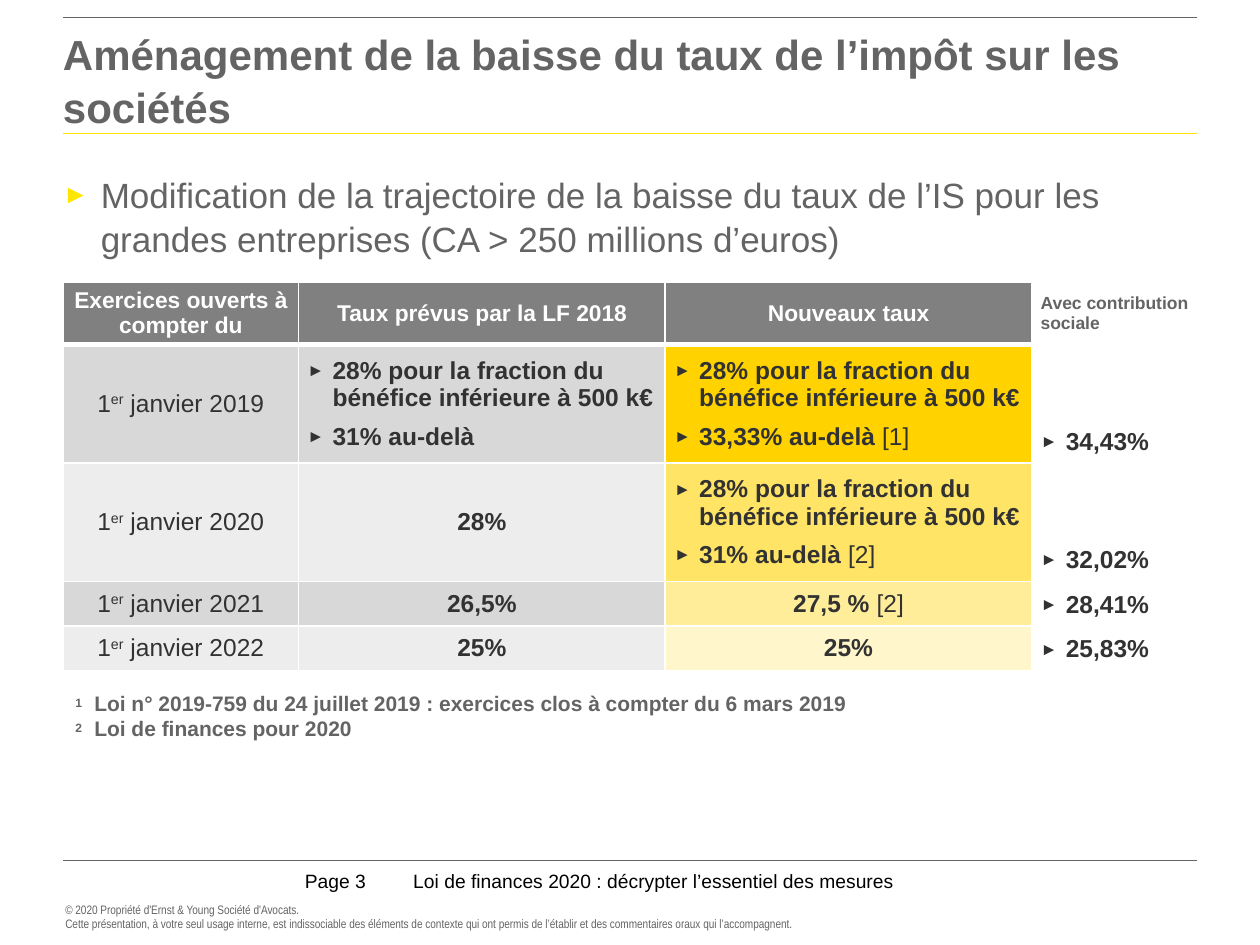
from lxml.etree import SubElement
from pptx import Presentation
from pptx.dml.color import RGBColor
from pptx.enum.shapes import MSO_CONNECTOR
from pptx.enum.text import MSO_ANCHOR, PP_ALIGN
from pptx.oxml.ns import qn
from pptx.util import Emu, Inches, Pt

SLIDE_WIDTH, SLIDE_HEIGHT = 10, 7.5
MARGIN = 0.5
CONTENT_WIDTH = SLIDE_WIDTH - 2 * MARGIN

WHITE = RGBColor(0xFF, 0xFF, 0xFF)
BLACK = RGBColor(0x00, 0x00, 0x00)
GREY = RGBColor(0x64, 0x64, 0x64)
DARK = RGBColor(0x32, 0x32, 0x32)
HEADER_FILL = RGBColor(0x80, 0x80, 0x80)
BAND_FILLS = (RGBColor(0xD8, 0xD8, 0xD8), RGBColor(0xED, 0xED, 0xED))
YELLOW = RGBColor(0xFF, 0xE6, 0x00)
GOLD = RGBColor(0xFF, 0xD2, 0x00)

COLUMN_WIDTHS = (1.87, 2.91, 2.91, 1.42)
ROW_HEIGHTS = (0.49, 0.94, 0.94, 0.34, 0.34)
HEADERS = ("Exercices ouverts à compter du", "Taux prévus par la LF 2018",
           "Nouveaux taux", "Avec contribution sociale")
REDUCED_RATE = "28% pour la fraction du bénéfice inférieure à 500 k€"
# Year, planned rates, new rates, note on the last new rate, rate with
# contribution, opacity of the new rate's fill in percent
RATES = (
    ("2019", (REDUCED_RATE, "31% au-delà"), (REDUCED_RATE, "33,33% au-delà "), "[1]", "34,43%", 100),
    ("2020", ("28%",), (REDUCED_RATE, "31% au-delà "), "[2]", "32,02%", 60),
    ("2021", ("26,5%",), ("27,5 % ",), "[2]", "28,41%", 40),
    ("2022", ("25%",), ("25%",), "", "25,83%", 20),
)
FOOTNOTES = (
    ("1 ", "Loi n° 2019-759 du 24 juillet 2019 : exercices clos à compter du 6 mars 2019"),
    ("2 ", "Loi de finances pour 2020"),
)


def style_font(font, size, color, bold=False, name="Arial"):
    font.name, font.size, font.bold = name, Pt(size), bold
    font.color.rgb = color


def add_run(paragraph, text, size, color, bold=False, baseline=0):
    """Append a run; baseline is its raise in percent."""
    run = paragraph.add_run()
    run.text = text
    style_font(run.font, size, color, bold)
    if baseline:
        run._r.get_or_add_rPr().set("baseline", str(baseline * 1000))


def set_hanging_indent(paragraph, indent):
    properties = paragraph._p.get_or_add_pPr()
    properties.set("marL", str(Inches(indent)))
    properties.set("indent", str(-Inches(indent)))
    return properties


def add_bullet(paragraph, indent, percent, color=None):
    properties = set_hanging_indent(paragraph, indent)
    if color is not None:
        bullet_color = SubElement(properties, qn("a:buClr"))
        SubElement(bullet_color, qn("a:srgbClr")).set("val", str(color))
    SubElement(properties, qn("a:buSzPct")).set("val", str(percent * 1000))
    SubElement(properties, qn("a:buFont")).set("typeface", "Arial")
    SubElement(properties, qn("a:buChar")).set("char", "►")


def add_text_box(slide, box, insets=(0, 0, 0, 0)):
    """Add a wrapping text box; insets run left, top, right, bottom."""
    text_frame = slide.shapes.add_textbox(*map(Inches, box)).text_frame
    text_frame.word_wrap = True
    (text_frame.margin_left, text_frame.margin_top,
     text_frame.margin_right, text_frame.margin_bottom) = map(Inches, insets)
    return text_frame


def add_rule(slide, top, color, width):
    line = slide.shapes.add_connector(
        MSO_CONNECTOR.STRAIGHT, Inches(MARGIN), Inches(top),
        Inches(MARGIN + CONTENT_WIDTH), Inches(top))
    line.line.color.rgb = color
    line.line.width = Pt(width)
    SubElement(line._element.spPr, qn("a:effectLst"))


def add_title(slide, box):
    left, top, width, height = box
    add_rule(slide, top, GREY, 0.5)
    add_rule(slide, top + height - 0.02, YELLOW, 1)
    text_frame = add_text_box(slide, box, (0, 0.04, 0, 0))
    text_frame.vertical_anchor = MSO_ANCHOR.MIDDLE
    text_frame.text = "Aménagement de la baisse du taux de l’impôt sur les sociétés"
    paragraph = text_frame.paragraphs[0]
    paragraph.line_spacing = 1.05
    style_font(paragraph.runs[0].font, 24, GREY, bold=True)


def add_body(slide, box):
    text_frame = add_text_box(slide, box)
    text_frame.text = ("Modification de la trajectoire de la baisse du taux de l’IS pour les "
                       "grandes entreprises (CA > 250 millions d’euros)")
    paragraph = text_frame.paragraphs[0]
    add_bullet(paragraph, 0.3, 75, YELLOW)
    paragraph.line_spacing = 1.05
    style_font(paragraph.runs[0].font, 20, GREY)


def set_borders(cell, top=1, bottom=1):
    properties = cell._tc.get_or_add_tcPr()
    for side, width in (("L", 1), ("R", 1), ("T", top), ("B", bottom)):
        border = SubElement(properties, qn(f"a:ln{side}"))
        border.set("w", str(Pt(width)))
        fill = SubElement(border, qn("a:solidFill"))
        SubElement(fill, qn("a:srgbClr")).set("val", str(WHITE))


def format_cell(cell, fill, opacity=100, vertical_inset=0.06, **borders):
    set_borders(cell, **borders)
    cell.vertical_anchor = MSO_ANCHOR.MIDDLE
    cell.margin_left = cell.margin_right = Inches(0.07)
    cell.margin_top = cell.margin_bottom = Inches(vertical_inset)
    if fill is None:
        cell.fill.background()
        return
    cell.fill.solid()
    cell.fill.fore_color.rgb = fill
    if opacity < 100:
        color = cell._tc.tcPr.find(qn("a:solidFill")).find(qn("a:srgbClr"))
        SubElement(color, qn("a:alpha")).set("val", str(opacity * 1000))


def write_rates(cell, rates, note="", bulleted=False):
    """Write one paragraph per rate, with the note after the last."""
    for index, rate in enumerate(rates):
        paragraph = cell.text_frame.paragraphs[0] if index == 0 else cell.text_frame.add_paragraph()
        if bulleted:
            add_bullet(paragraph, 0.2, 70)
        else:
            paragraph.alignment = PP_ALIGN.CENTER
        if index:
            paragraph.space_before = Pt(6)
        add_run(paragraph, rate, 14, DARK, bold=True)
    if note:
        add_run(paragraph, note, 14, DARK)


def write_start_date(cell, year):
    paragraph = cell.text_frame.paragraphs[0]
    paragraph.alignment = PP_ALIGN.CENTER
    add_run(paragraph, "1", 14, DARK)
    add_run(paragraph, "er", 14, DARK, baseline=30)
    add_run(paragraph, f" janvier {year}", 14, DARK)


def add_rate_table(slide, left, top):
    table = slide.shapes.add_table(
        len(ROW_HEIGHTS), len(COLUMN_WIDTHS), Inches(left), Inches(top),
        Inches(sum(COLUMN_WIDTHS)), Inches(sum(ROW_HEIGHTS))).table
    for column, width in zip(table.columns, COLUMN_WIDTHS):
        column.width = Inches(width)
    for row, height in zip(table.rows, ROW_HEIGHTS):
        row.height = Inches(height)

    last = len(HEADERS) - 1
    for index, header in enumerate(HEADERS):
        cell = table.cell(0, index)
        format_cell(cell, None if index == last else HEADER_FILL, vertical_inset=0.03, bottom=3)
        cell.text_frame.text = header
        paragraph = cell.text_frame.paragraphs[0]
        paragraph.alignment = PP_ALIGN.LEFT if index == last else PP_ALIGN.CENTER
        size, color = (10, GREY) if index == last else (13, WHITE)
        style_font(paragraph.runs[0].font, size, color, bold=True)

    for row, (year, planned, new, note, total, opacity) in enumerate(RATES, start=1):
        date_cell, planned_cell, new_cell, total_cell = (
            table.cell(row, column) for column in range(len(HEADERS)))
        top_border = 3 if row == 1 else 1
        band = BAND_FILLS[(row - 1) % 2]
        for cell, fill in ((date_cell, band), (planned_cell, band), (total_cell, None)):
            format_cell(cell, fill, top=top_border)
        format_cell(new_cell, GOLD, opacity, top=top_border)
        write_start_date(date_cell, year)
        write_rates(planned_cell, planned, bulleted=len(planned) > 1)
        write_rates(new_cell, new, note, bulleted=len(new) > 1)
        write_rates(total_cell, (total,), bulleted=True)
        total_cell.vertical_anchor = MSO_ANCHOR.BOTTOM


def add_footnotes(slide, box):
    text_frame = add_text_box(slide, box, (0.1, 0.05, 0.1, 0.05))
    for index, (mark, note) in enumerate(FOOTNOTES):
        paragraph = text_frame.paragraphs[0] if index == 0 else text_frame.add_paragraph()
        set_hanging_indent(paragraph, 0.15)
        add_run(paragraph, mark, 12, GREY, bold=True, baseline=20)
        add_run(paragraph, "\t" + note, 12, GREY, bold=True)


def add_footer(slide, top):
    add_rule(slide, top, GREY, 0.25)
    for left, width, text in (
            (2.42, 0.73, "Page 3"),
            (3.28, 4.64, "Loi de finances 2020 : décrypter l’essentiel des mesures")):
        text_frame = add_text_box(slide, (left, top + 0.07, width, 0.22))
        text_frame.text = text
        style_font(text_frame.paragraphs[0].runs[0].font, 11, BLACK)
    text_frame = add_text_box(slide, (0.42, top + 0.28, 7.5, 0.34), (0.1, 0.05, 0.1, 0.05))
    text_frame.text = ("© 2020 Propriété d'Ernst & Young Société d'Avocats.\v"
                       "Cette présentation, à votre seul usage interne, est indissociable des éléments de contexte "
                       "qui ont permis de l’établir et des commentaires oraux qui l’accompagnent.")
    for run in text_frame.paragraphs[0].runs:
        style_font(run.font, 7, GREY, name="Arial Narrow")


def main():
    presentation = Presentation()
    presentation.slide_width, presentation.slide_height = Inches(SLIDE_WIDTH), Inches(SLIDE_HEIGHT)
    slide = presentation.slides.add_slide(presentation.slide_layouts[6])
    add_footer(slide, 6.83)
    add_title(slide, (MARGIN, 0.14, CONTENT_WIDTH, 0.94))
    add_body(slide, (MARGIN, 1.36, CONTENT_WIDTH, 5.32))
    add_rate_table(slide, MARGIN, 2.24)
    add_footnotes(slide, (MARGIN, 5.43, CONTENT_WIDTH, 0.42))
    presentation.save("out.pptx")


if __name__ == "__main__":
    main()
